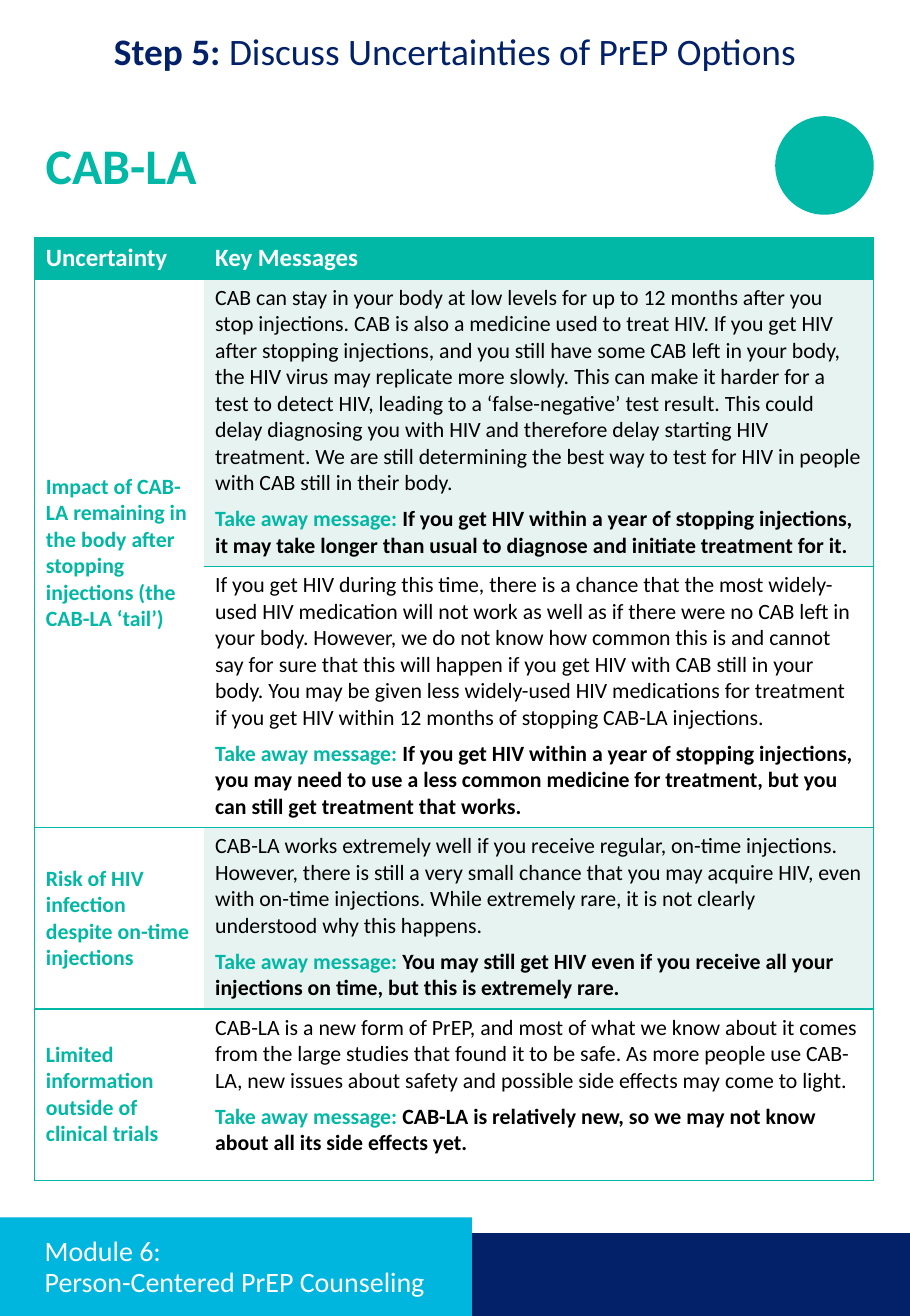
"""Build the Step 5 counseling slide on the uncertainties of CAB-LA."""
from dataclasses import dataclass

from lxml.etree import SubElement
from pptx import Presentation
from pptx.dml.color import RGBColor
from pptx.enum.shapes import MSO_SHAPE as Shape
from pptx.enum.text import MSO_ANCHOR as Anchor, PP_ALIGN as Align
from pptx.oxml.ns import qn
from pptx.util import Pt


@dataclass(frozen=True)
class Theme:
    font: str = "Calibri"
    teal: str = "00B8A5"
    tint: str = "E7F3F0"
    navy: str = "022169"
    sky: str = "00B5DE"
    white: str = "FFFFFF"
    black: str = "000000"
    heading: int = 32
    title: int = 24
    footer: int = 18
    header: int = 16
    body: int = 14


HEADERS = ["Uncertainty", "Key Messages"]
TAKE_AWAY = "Take away message: "
TOPICS = {
    1: "Impact of CAB-LA remaining in the body after stopping injections (the CAB-LA ‘tail’)",
    3: "Risk of HIV infection despite on-time injections",
    4: "Limited information outside of clinical trials",
}
MESSAGES = [
    ("CAB can stay in your body at low levels for up to 12 months after you stop injections. "
     "CAB is also a medicine used to treat HIV. If you get HIV after stopping injections, and "
     "you still have some CAB left in your body, the HIV virus may replicate more slowly. This "
     "can make it harder for a test to detect HIV, leading to a ‘false-negative’ test result. "
     "This could delay diagnosing you with HIV and therefore delay starting HIV treatment. We "
     "are still determining the best way to test for HIV in people with CAB still in their body.",
     "If you get HIV within a year of stopping injections, it may take longer than usual to "
     "diagnose and initiate treatment for it."),
    ("If you get HIV during this time, there is a chance that the most widely-used HIV "
     "medication will not work as well as if there were no CAB left in your body. However, we "
     "do not know how common this is and cannot say for sure that this will happen if you get "
     "HIV with CAB still in your body. You may be given less widely-used HIV medications for "
     "treatment if you get HIV within 12 months of stopping CAB-LA injections.",
     "If you get HIV within a year of stopping injections, you may need to use a less common "
     "medicine for treatment, but you can still get treatment that works."),
    ("CAB-LA works extremely well if you receive regular, on-time injections. However, there "
     "is still a very small chance that you may acquire HIV, even with on-time injections. "
     "While extremely rare, it is not clearly understood why this happens.",
     "You may still get HIV even if you receive all your injections on time, but this is "
     "extremely rare."),
    ("CAB-LA is a new form of PrEP, and most of what we know about it comes from the large "
     "studies that found it to be safe. As more people use CAB-LA, new issues about safety and "
     "possible side effects may come to light.",
     "CAB-LA is relatively new, so we may not know about all its side effects yet."),
]


class Page:
    """Draw themed elements on a grid of 100 columns by 100 rows."""

    def __init__(self, prs, theme):
        self.theme = theme
        self.s = prs.slides.add_slide(prs.slide_layouts[6])
        self.col, self.row = prs.slide_width / 100, prs.slide_height / 100

    def box(self, x, y, w, h):
        return [round(v * u) for v, u in zip((x, y, w, h), (self.col, self.row) * 2)]

    def shape(self, kind, color, *area):
        sp = self.s.shapes.add_shape(kind, *self.box(*area))
        sp.shadow.inherit = False
        sp.fill.solid()
        sp.fill.fore_color.rgb = RGBColor.from_string(color)
        sp.line.fill.background()

    def run(self, p, text, size, color, bold=False):
        r = p.add_run()
        r.text = text
        r.font.name, r.font.size, r.font.bold = self.theme.font, Pt(size), bold
        r.font.color.rgb = RGBColor.from_string(color)

    def text(self, area, lines, size, color, align=Align.LEFT, anchor=Anchor.TOP, spacing=None):
        tf = self.s.shapes.add_textbox(*self.box(*area)).text_frame
        tf.word_wrap, tf.vertical_anchor = True, anchor
        p = tf.paragraphs[0]
        p.alignment, p.line_spacing = align, spacing
        for i, runs in enumerate(lines):
            if i:
                p.add_line_break()
            for text, bold in runs:
                self.run(p, text, size, color, bold)

    def borders(self, cell, sides):
        tcPr = cell._tc.get_or_add_tcPr()
        for side in "LRTB":
            ln = SubElement(tcPr, qn(f"a:ln{side}"), w=str(Pt(1)))
            if side in sides:
                fill = SubElement(ln, qn("a:solidFill"))
                SubElement(fill, qn("a:srgbClr"), val=self.theme.teal)
            else:
                SubElement(ln, qn("a:noFill"))

    def cell(self, cell, sides, fill, paragraphs, anchor=Anchor.TOP):
        self.borders(cell, sides)
        cell.fill.solid()
        cell.fill.fore_color.rgb = RGBColor.from_string(fill)
        cell.vertical_anchor = anchor
        tf = cell.text_frame
        for i, runs in enumerate(paragraphs):
            p = tf.add_paragraph() if i else tf.paragraphs[0]
            if i:
                p.space_before = Pt(6)
            for run in runs:
                self.run(p, *run)

    def table(self, x, y, widths, heights):
        t = self.theme
        area = self.box(x, y, sum(widths), sum(heights))
        tbl = self.s.shapes.add_table(len(heights), len(widths), *area).table
        tbl.first_row = tbl.horz_banding = False
        for column, w in zip(tbl.columns, widths):
            column.width = round(w * self.col)
        for row, h in zip(tbl.rows, heights):
            row.height = round(h * self.row)
        tbl.cell(1, 0).merge(tbl.cell(2, 0))
        for c, text in enumerate(HEADERS):
            self.cell(tbl.cell(0, c), "LTB" if c == 0 else "RTB", t.teal,
                      [[(text, t.header, t.white, True)]])
        for i, (detail, take_away) in enumerate(MESSAGES, 1):
            if i in TOPICS:
                self.cell(tbl.cell(i, 0), "LTB", t.white,
                          [[(TOPICS[i], t.body, t.teal, True)]], Anchor.MIDDLE)
            else:
                self.cell(tbl.cell(i, 0), "LB", t.white, [])
            self.cell(tbl.cell(i, 1), "RTB", t.tint if i % 2 else t.white, [
                [(detail, t.body, t.black)],
                [(TAKE_AWAY, t.body, t.teal, True), (take_away, t.body, t.black, True)],
            ])


def main():
    prs = Presentation()
    prs.slide_width, prs.slide_height = Pt(585), Pt(846)
    t = Theme()
    page = Page(prs, t)
    page.shape(Shape.RECTANGLE, t.navy, 51.85, 93.7, 48.15, 6.3)
    page.shape(Shape.RECTANGLE, t.sky, 0, 92.5, 51.85, 7.5)
    page.text((0, 2.13, 100, 4.26),
              [[("Step 5: ", True), ("Discuss Uncertainties of PrEP Options", False)]],
              t.title, t.navy, align=Align.CENTER, spacing=0.9)
    page.table(3.82, 18.04, [18.6, 73.6], [3.15, 21.87, 19.83, 13.79, 13.02])
    page.text((3.82, 9.79, 77.17, 5.45), [[("CAB-LA", True)]], t.heading, t.teal)
    page.shape(Shape.OVAL, t.teal, 85.19, 8.83, 10.83, 7.49)
    page.text((3.69, 94.21, 47.5, 4.26),
              [[("Module 6: ", False)], [("Person-Centered PrEP Counseling", False)]],
              t.footer, t.white, anchor=Anchor.MIDDLE, spacing=0.9)
    prs.save("out.pptx")


if __name__ == "__main__":
    main()
